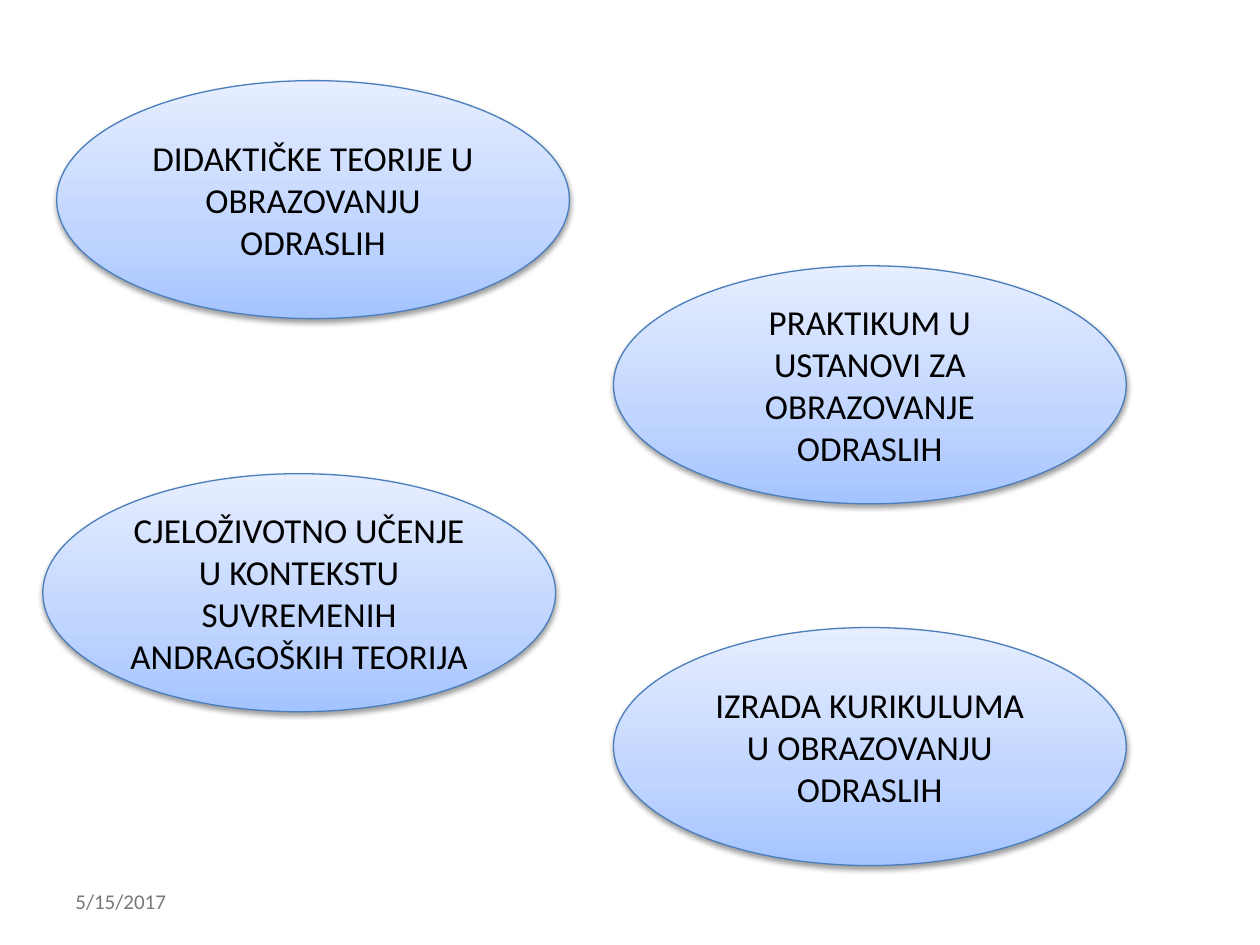
import copy

import pptx
import pptx.dml.color
import pptx.enum.shapes
import pptx.enum.text
import pptx.oxml
import pptx.oxml.ns
import pptx.util

Pt = pptx.util.Pt
qn = pptx.oxml.ns.qn

COURSE_SIZE = (293, 136)
COURSES = [
    (32.4, 46.1, "DIDAKTIČKE TEORIJE U OBRAZOVANJU ODRASLIH"),
    (350.6, 358.6, "IZRADA KURIKULUMA U OBRAZOVANJU ODRASLIH"),
    (350.6, 151.9, "PRAKTIKUM U USTANOVI ZA OBRAZOVANJE ODRASLIH"),
    (24.5, 270.7, "CJELOŽIVOTNO UČENJE U KONTEKSTU SUVREMENIH ANDRAGOŠKIH TEORIJA"),
]
GRADIENT = [(0, "A4C4FF"), (0.35, "BFD4FF"), (1, "E6EEFF")]
SHADOW = (
    '<a:outerShdw xmlns:a="http://schemas.openxmlformats.org/drawingml/2006/main"'
    ' blurRad="%d" dist="%d" dir="5400000" rotWithShape="0">'
    '<a:srgbClr val="000000"><a:alpha val="38000"/></a:srgbClr></a:outerShdw>'
) % (Pt(3.1), Pt(1.6))


def rgb(value):
    return pptx.dml.color.RGBColor.from_string(value)


def write(tf, text, size, color, align):
    tf.word_wrap = True
    tf.vertical_anchor = pptx.enum.text.MSO_ANCHOR.MIDDLE
    p = tf.paragraphs[0]
    p.alignment = align
    r = p.add_run()
    r.text = text
    r.font.name = "Calibri"
    r.font.size = Pt(size)
    r.font.color.rgb = rgb(color)


def fill_gradient(sp, stops, angle):
    sp.fill.gradient()
    sp.fill.gradient_angle = angle
    gs_list = sp._element.spPr.find(qn("a:gradFill")).find(qn("a:gsLst"))
    while len(gs_list) < len(stops):
        gs_list.append(copy.deepcopy(gs_list[0]))
    for stop, (position, color) in zip(sp.fill.gradient_stops, stops):
        stop.position = position
        stop.color.rgb = rgb(color)


def add_course(s, left, top, width, height, text):
    sp = s.shapes.add_shape(
        pptx.enum.shapes.MSO_SHAPE.OVAL, Pt(left), Pt(top), Pt(width), Pt(height)
    )
    fill_gradient(sp, GRADIENT, 90)
    sp.line.color.rgb = rgb("4B7EBC")
    sp.line.width = Pt(0.75)
    sp.shadow.inherit = False
    effects = sp._element.spPr.find(qn("a:effectLst"))
    effects.append(pptx.oxml.parse_xml(SHADOW))
    write(sp.text_frame, text, 20, "000000", pptx.enum.text.PP_ALIGN.CENTER)


def add_date(s, left, top, width, height, text):
    sp = s.shapes.add_textbox(Pt(left), Pt(top), Pt(width), Pt(height))
    write(sp.text_frame, text, 12, "777877", pptx.enum.text.PP_ALIGN.LEFT)


def main():
    prs = pptx.Presentation()
    prs.slide_width, prs.slide_height = Pt(720), Pt(540)
    s = prs.slides.add_slide(prs.slide_layouts[6])
    add_date(s, 36, 500.5, 168, 28.75, "5/15/2017")
    for left, top, text in COURSES:
        add_course(s, left, top, *COURSE_SIZE, text)
    prs.save("out.pptx")


if __name__ == "__main__":
    main()
